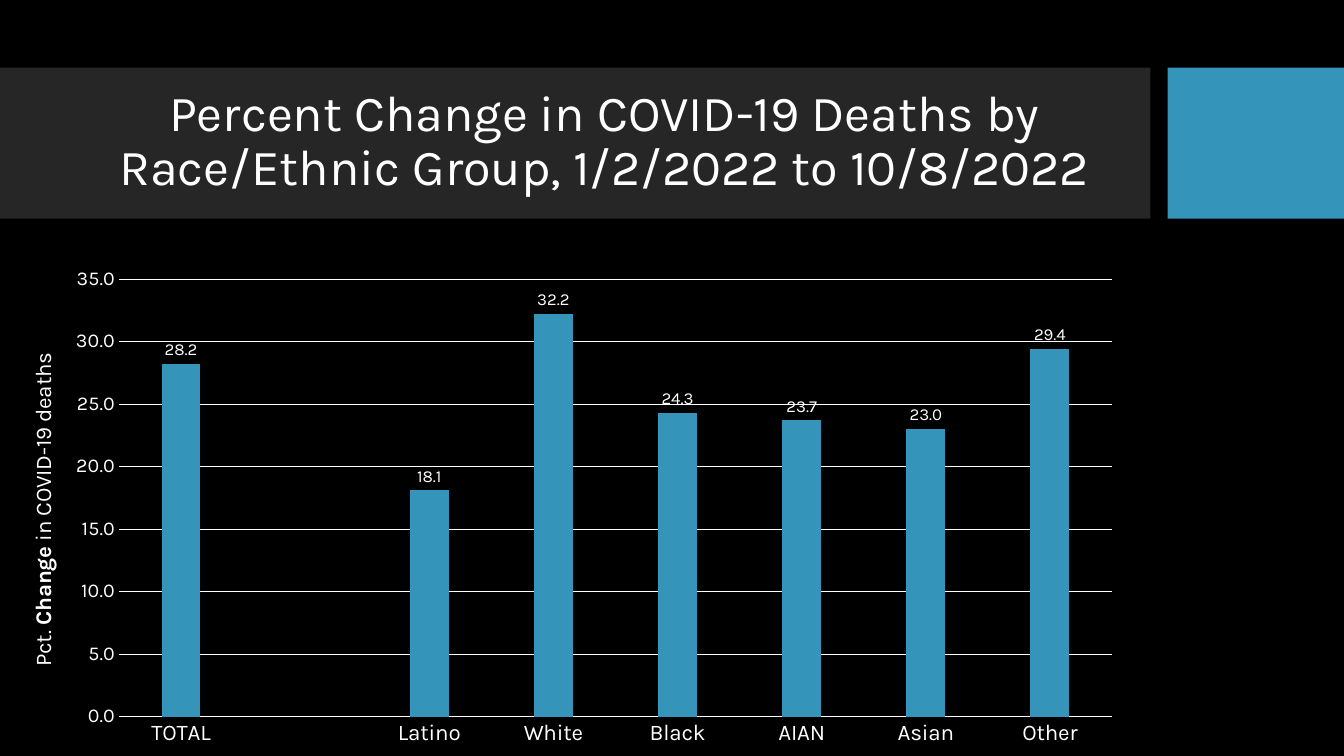
from pptx import Presentation
from pptx.chart.data import CategoryChartData
from pptx.dml.color import RGBColor
from pptx.enum.chart import XL_CHART_TYPE as ChartType, XL_LABEL_POSITION as LabelPosition
from pptx.enum.chart import XL_TICK_MARK as TickMark
from pptx.enum.shapes import MSO_SHAPE as Preset
from pptx.enum.text import MSO_ANCHOR as Anchor, PP_ALIGN as Align
from pptx.oxml import parse_xml
from pptx.oxml.ns import nsdecls, qn
from pptx.util import Inches, Pt

TITLE = "Percent Change in COVID-19 Deaths by Race/Ethnic Group, 1/2/2022 to 10/8/2022"
AXIS_TITLE = [("Pct. ", False), ("Change", True), (" in COVID-19 deaths", False)]
DEATH_CHANGES = [
    ("TOTAL", 28.2), ("", None), ("Latino", 18.1), ("White", 32.2),
    ("Black", 24.3), ("AIAN", 23.7), ("Asian", 23.0), ("Other", 29.4),
]


class Theme:
    font = "Karla"
    background = RGBColor(0x00, 0x00, 0x00)
    band = RGBColor(0x26, 0x26, 0x26)
    accent = RGBColor(0x34, 0x94, 0xBA)
    text = RGBColor(0xFF, 0xFF, 0xFF)
    title_size, category_size, value_size, label_size = 36, 16, 14, 12
    line_width = Pt(0.75)


SLIDE_WIDTH, SLIDE_HEIGHT = 13.33, 7.5
BAND_TOP, BAND_HEIGHT = 0.67, 1.5
BAND_WIDTH, ACCENT_LEFT = 11.41, 11.58
CHART_TOP, CHART_WIDTH = 2.56, 11.26
PLOT_BOX = {"x": 1.18, "y": 0.21, "w": 9.85, "h": 4.34}
AXIS_TITLE_BOX = {"x": 0.26, "y": 0.91}


def style_font(font, size, bold=False):
    font.name, font.size, font.bold = Theme.font, Pt(size), bold
    font.color.rgb = Theme.text


def style_line(line):
    line.color.rgb = Theme.text
    line.width = Theme.line_width


def add_block(slide, left, width, color):
    block = slide.shapes.add_shape(
        Preset.RECTANGLE, Inches(left), Inches(BAND_TOP), Inches(width), Inches(BAND_HEIGHT))
    block.shadow.inherit = False
    block.fill.solid()
    block.fill.fore_color.rgb = color
    block.line.fill.background()


def add_title(slide):
    box = slide.shapes.add_textbox(Inches(0.74), Inches(0.82), Inches(10.51), Inches(1.18))
    frame = box.text_frame
    frame.word_wrap = True
    frame.vertical_anchor = Anchor.MIDDLE
    paragraph = frame.paragraphs[0]
    paragraph.text = TITLE
    paragraph.alignment = Align.CENTER
    paragraph.line_spacing = 0.9
    style_font(paragraph.font, Theme.title_size)


def place(element, box, before, target=""):
    """Fix a chart part at a box given in inches from the chart's corner."""
    for layout in element.findall(qn("c:layout")):
        element.remove(layout)
    full = {"x": CHART_WIDTH, "w": CHART_WIDTH,
            "y": SLIDE_HEIGHT - CHART_TOP, "h": SLIDE_HEIGHT - CHART_TOP}
    modes = "".join(f'<c:{key}Mode val="edge"/>' for key in "xy")
    values = "".join(f'<c:{key} val="{inches / full[key]:.4f}"/>' for key, inches in box.items())
    layout = parse_xml(f'<c:layout {nsdecls("c")}><c:manualLayout>{target}{modes}{values}'
                       '</c:manualLayout></c:layout>')
    element.find(qn(before)).addprevious(layout)


def style_axes(chart):
    category_axis, value_axis = chart.category_axis, chart.value_axis
    for axis, size in ((category_axis, Theme.category_size), (value_axis, Theme.value_size)):
        axis.major_tick_mark = axis.minor_tick_mark = TickMark.NONE
        style_font(axis.tick_labels.font, size)
    style_line(category_axis.format.line)
    value_axis.format.line.fill.background()
    value_axis.minimum_scale, value_axis.maximum_scale, value_axis.major_unit = 0, 35, 5
    style_line(value_axis.major_gridlines.format.line)
    value_axis.tick_labels.number_format = "0.0"
    value_axis.tick_labels.number_format_is_linked = False

    title = value_axis.axis_title
    frame = title.text_frame
    properties = frame._txBody.bodyPr
    properties.set("rot", "-5400000")
    properties.set("vert", "horz")
    for text, bold in AXIS_TITLE:
        run = frame.paragraphs[0].add_run()
        run.text = text
        style_font(run.font, Theme.category_size, bold)
    place(title._element, AXIS_TITLE_BOX, "c:overlay")


def add_deaths_chart(slide):
    data = CategoryChartData(number_format="0.0")
    data.categories = [group for group, _ in DEATH_CHANGES]
    data.add_series("Series 1", [change for _, change in DEATH_CHANGES])
    chart = slide.shapes.add_chart(
        ChartType.COLUMN_CLUSTERED, 0, Inches(CHART_TOP), Inches(CHART_WIDTH),
        Inches(SLIDE_HEIGHT - CHART_TOP), data).chart
    chart.has_legend = chart.has_title = False
    style_font(chart.font, Theme.category_size)
    style_axes(chart)

    plot = chart.plots[0]
    plot.vary_by_categories = False
    plot.gap_width, plot.overlap = 219, -27
    fill = plot.series[0].format.fill
    fill.solid()
    fill.fore_color.rgb = Theme.accent
    plot.has_data_labels = True
    labels = plot.data_labels
    labels.show_value = True
    labels.position = LabelPosition.OUTSIDE_END
    labels.number_format, labels.number_format_is_linked = "0.0", False
    style_font(labels.font, Theme.label_size)
    place(plot._element.getparent(), PLOT_BOX, "c:barChart", '<c:layoutTarget val="inner"/>')


def main():
    presentation = Presentation()
    presentation.slide_width = Inches(SLIDE_WIDTH)
    presentation.slide_height = Inches(SLIDE_HEIGHT)
    slide = presentation.slides.add_slide(presentation.slide_layouts[6])
    slide.background.fill.solid()
    slide.background.fill.fore_color.rgb = Theme.background
    add_block(slide, 0, BAND_WIDTH, Theme.band)
    add_block(slide, ACCENT_LEFT, SLIDE_WIDTH - ACCENT_LEFT, Theme.accent)
    add_title(slide)
    add_deaths_chart(slide)
    presentation.save("out.pptx")


if __name__ == "__main__":
    main()
